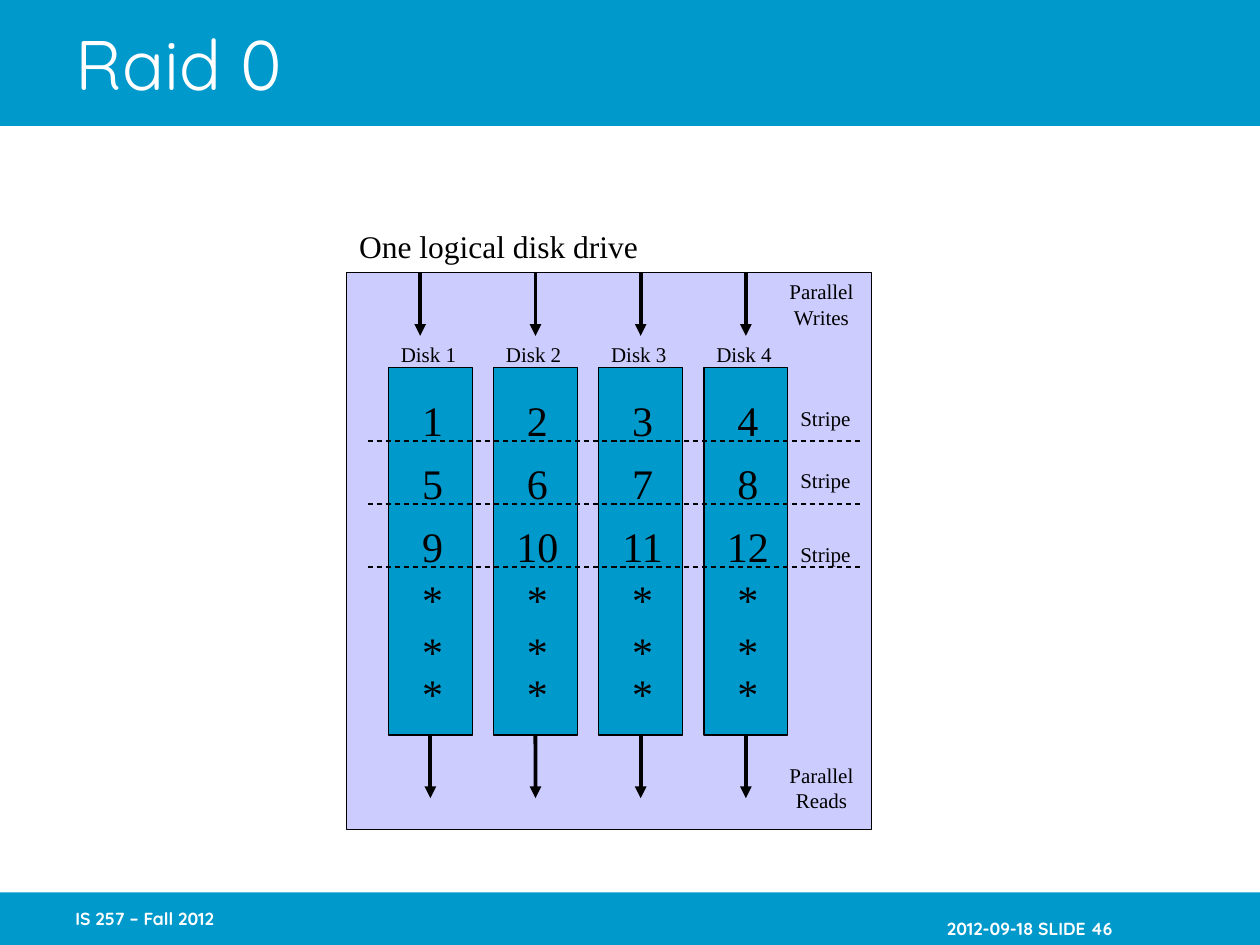
from dataclasses import dataclass

from lxml.etree import SubElement
from pptx import Presentation
from pptx.dml.color import RGBColor
from pptx.enum.dml import MSO_LINE
from pptx.enum.shapes import MSO_CONNECTOR, MSO_SHAPE
from pptx.enum.text import MSO_ANCHOR, PP_ALIGN
from pptx.oxml.ns import qn
from pptx.util import Cm, Pt


@dataclass(frozen=True)
class Theme:
    blue: RGBColor = RGBColor(0x00, 0x99, 0xCC)
    lilac: RGBColor = RGBColor(0xCC, 0xCC, 0xFF)
    white: RGBColor = RGBColor(0xFF, 0xFF, 0xFF)
    black: RGBColor = RGBColor(0, 0, 0)
    head_font: str = "Quicksand"
    body_font: str = "Times New Roman"
    title: int = 40
    block: int = 24
    caption: int = 18
    label: int = 12
    footer: int = 10


T = Theme()

TITLE = "Raid 0"
COURSE = "IS 257 – Fall 2012"
DATE = "2012-09-18 SLIDE 46"
CAPTION = "One logical disk drive"
DISKS = ["Disk 1", "Disk 2", "Disk 3", "Disk 4"]
# Block row and the top of its text in cm
BLOCK_ROWS = [
    (["1", "2", "3", "4"], 7.83),
    (["5", "6", "7", "8"], 9.1),
    (["9", "10", "11", "12"], 10.37),
    (["*"] * 4, 11.43),
    (["*"] * 4, 12.49),
    (["*"] * 4, 13.34),
]
STRIPE_LABEL_TOPS = [8.05, 9.31, 10.8]
STRIPE_LINES = [8.89, 10.16, 11.43]
PARALLEL = [("Parallel\nWrites", 5.5), ("Parallel\nReads", 15.24)]

# Geometry in cm
WIDTH, HEIGHT = 25.4, 19.05
FOOT_TOP, FOOT_H = 17.99, 1.06
DRIVE = (6.99, 5.5, 10.58, 11.23)
DISK_LEFT, DISK_TOP, DISK_W, DISK_H, PITCH = 7.83, 7.41, 1.69, 7.41, 2.12
ARROW = 1.27
INSET = 0.25
ROW_LEFT = 8.26


def add_box(s, left, top, width, height, fill, outlined=True):
    sp = s.shapes.add_shape(MSO_SHAPE.RECTANGLE, Cm(left), Cm(top), Cm(width), Cm(height))
    sp.shadow.inherit = False
    sp.fill.solid()
    sp.fill.fore_color.rgb = fill
    if outlined:
        sp.line.color.rgb = T.black
        sp.line.width = Pt(0.75)
    else:
        sp.line.fill.background()
    return sp


def style(tf, size, font, color, bold=False, align=PP_ALIGN.LEFT):
    for p in tf.paragraphs:
        p.alignment = align
        for r in p.runs:
            r.font.size = Pt(size)
            r.font.name = font
            r.font.color.rgb = color
            r.font.bold = bold


def add_text(s, text, left, top, width, height, size, align=PP_ALIGN.LEFT):
    tf = s.shapes.add_textbox(Cm(left), Cm(top), Cm(width), Cm(height)).text_frame
    tf.word_wrap = False
    tf.text = text
    style(tf, size, T.body_font, T.black, align=align)
    return tf


def add_footer(s, text, left, anchor):
    tf = s.shapes.add_textbox(Cm(left), Cm(FOOT_TOP), Cm(5.28), Cm(FOOT_H)).text_frame
    tf.word_wrap = True
    tf.vertical_anchor = anchor
    tf.margin_right = 0
    tf.text = text
    style(tf, T.footer, T.head_font, T.white, bold=True)


def add_line(s, x1, y1, x2, y2, width):
    line = s.shapes.add_connector(MSO_CONNECTOR.STRAIGHT, Cm(x1), Cm(y1), Cm(x2), Cm(y2))
    line.line.color.rgb = T.black
    line.line.width = Pt(width)
    SubElement(line.element.spPr, qn("a:effectLst"))
    return line


def add_arrow_down(s, x, top):
    arrow = add_line(s, x, top, x, top + ARROW, 2.25)
    SubElement(arrow.line._get_or_add_ln(), qn("a:tailEnd"), type="triangle")
    return arrow


def add_block_row(s, blocks, top, centers):
    """One line of text, each block after the first centred on a tab stop."""
    tf = add_text(s, "\t".join(blocks), ROW_LEFT, top, 8, 1.27, T.block)
    tf.word_wrap = True
    tabs = SubElement(tf.paragraphs[0]._p.get_or_add_pPr(), qn("a:tabLst"))
    for center in centers[1:]:
        SubElement(tabs, qn("a:tab"), pos=str(Cm(center - ROW_LEFT - INSET)), algn="ctr")


def add_frame(s):
    title = s.shapes.title
    add_box(s, 0, 0, WIDTH, 2.54, T.blue, outlined=False)
    add_box(s, 0, FOOT_TOP, WIDTH, FOOT_H, T.blue, outlined=False)
    title.element.getparent().append(title.element)  # in front of the band
    title.left, title.top, title.width, title.height = Cm(1.27), Cm(0), Cm(21.59), Cm(2.54)
    tf = title.text_frame
    tf.text = TITLE
    tf.vertical_anchor = MSO_ANCHOR.MIDDLE
    style(tf, T.title, T.head_font, T.white)
    add_footer(s, DATE, 18.84, MSO_ANCHOR.BOTTOM)
    add_footer(s, COURSE, 1.27, MSO_ANCHOR.MIDDLE)


def add_array(s):
    add_box(s, *DRIVE, T.lilac)
    add_text(s, CAPTION, 6.99, 4.45, 6.15, 1.02, T.caption)
    lefts = [DISK_LEFT + i * PITCH for i in range(len(DISKS))]
    middles = [left + DISK_W / 2 for left in lefts]
    for i, (name, left, middle) in enumerate(zip(DISKS, lefts, middles)):
        disk = add_box(s, left, DISK_TOP, DISK_W, DISK_H, T.blue)
        add_text(s, name, left, 6.77, 1.63, 0.76, T.label)
        add_arrow_down(s, middle if i else 8.47, DRIVE[1])
        add_arrow_down(s, middle, DISK_TOP + DISK_H).begin_connect(disk, 2)
    centers = [middle + 0.04 for middle in middles]
    for blocks, top in BLOCK_ROWS:
        add_block_row(s, blocks, top, centers)
    for y in STRIPE_LINES:
        add_line(s, 7.41, y, 17.36, y, 0.75).line.dash_style = MSO_LINE.DASH
    for top in STRIPE_LABEL_TOPS:
        add_text(s, "Stripe", 15.88, top, 1.52, 0.76, T.label, PP_ALIGN.CENTER)
    for text, top in PARALLEL:
        add_text(s, text, 15.66, top, 1.8, 1.27, T.label, PP_ALIGN.CENTER)


def main():
    prs = Presentation()
    prs.slide_width, prs.slide_height = Cm(WIDTH), Cm(HEIGHT)
    s = prs.slides.add_slide(prs.slide_layouts[5])
    add_frame(s)
    add_array(s)
    prs.save("out.pptx")


if __name__ == "__main__":
    main()
